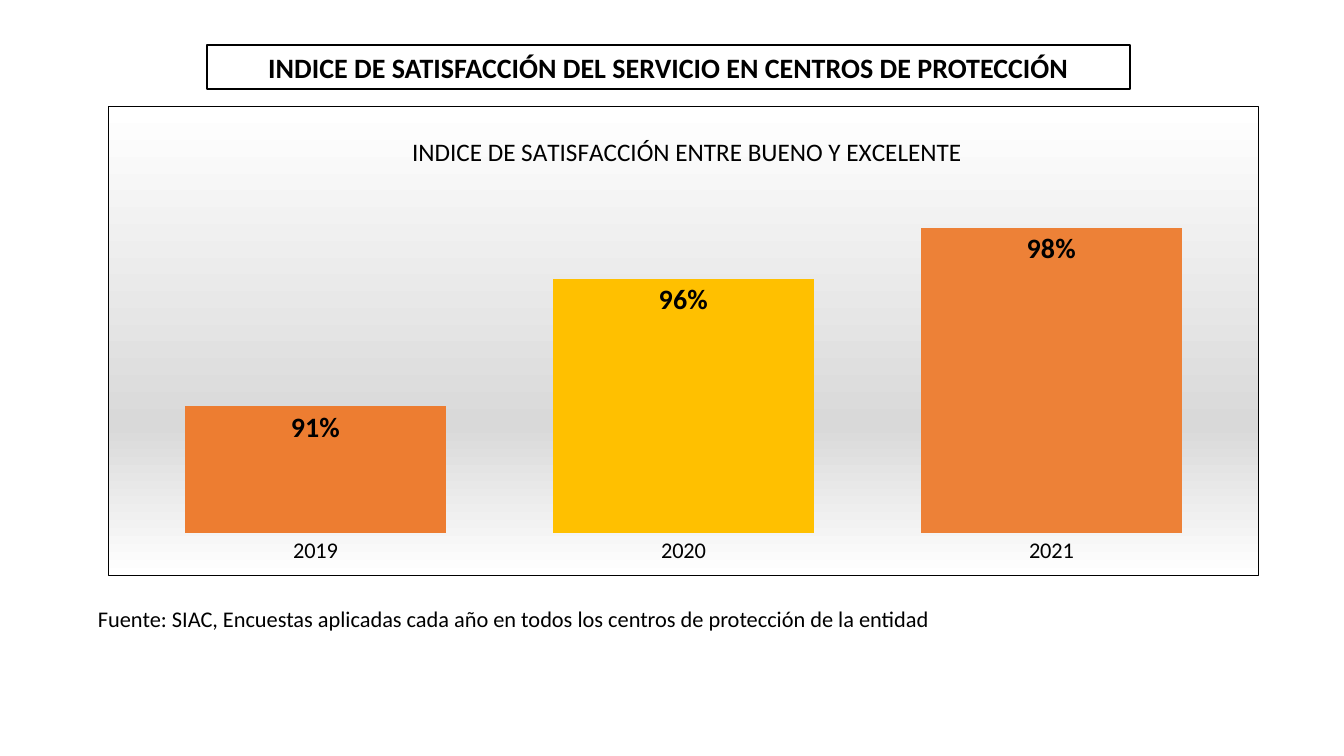
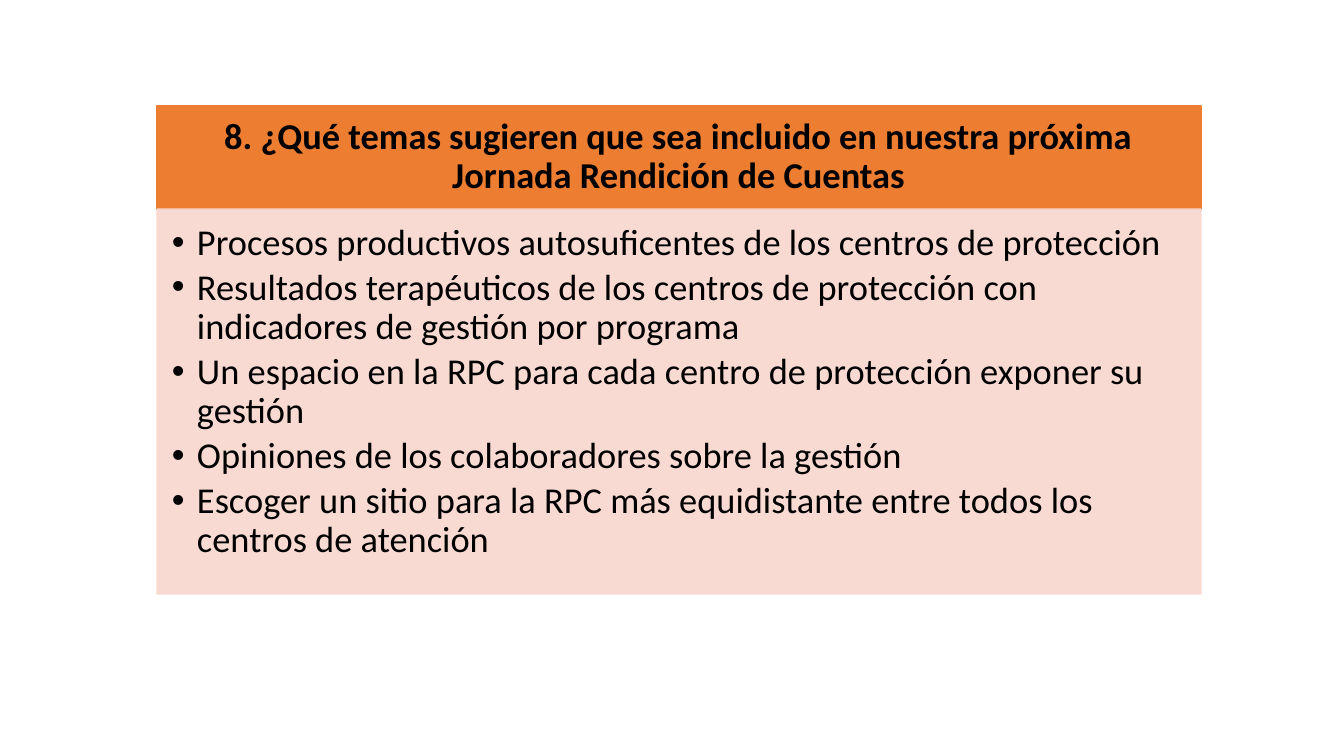
import pptx
import pptx.chart.data
import pptx.dml.color
import pptx.enum.chart
import pptx.enum.shapes
import pptx.enum.text
import pptx.oxml
import pptx.oxml.ns
import pptx.util

SCALE = 914400 / 100.8  # EMU in one px
FONT = "Calibri"
HUES = {
    "ink": "000000",
    "paper": "FFFFFF",
    "grey": "D9D9D9",
    "orange": "ED7D31",
    "gold": "FFC000",
    "amber": "ED8137",
    "pink": "F8D7CE",
}
ALIGN = pptx.enum.text.PP_ALIGN
ANCHOR = pptx.enum.text.MSO_ANCHOR
qn = pptx.oxml.ns.qn


def px(size):
    return pptx.util.Emu(round(size * SCALE))


def hue(name):
    return pptx.dml.color.RGBColor.from_string(HUES[name])


def xml(text, *names):
    """Build an element; the root takes its namespaces at the mark @."""
    return pptx.oxml.parse_xml(text.replace("@", pptx.oxml.ns.nsdecls(*names), 1))


class Deck:
    def __init__(self):
        self.file = pptx.Presentation()
        self.file.slide_width, self.file.slide_height = px(1344), px(756)
        self.slide = None

    def page(self):
        self.slide = self.file.slides.add_slide(self.file.slide_layouts[5])

    # Shared styles
    def style(self, font, size, bold=False):
        font.name, font.size, font.bold = FONT, pptx.util.Pt(size), bold
        font.color.rgb = hue("ink")

    def paint(self, shape, fill, line):
        shape.fill.solid()
        shape.fill.fore_color.rgb = hue(fill)
        shape.line.color.rgb = hue(line)
        shape.line.width = pptx.util.Pt(1)

    def frame(self, shape, pads, anchor):
        frame = shape.text_frame
        frame.word_wrap = True
        frame.auto_size = pptx.enum.text.MSO_AUTO_SIZE.NONE
        frame.vertical_anchor = anchor
        (frame.margin_left, frame.margin_top,
         frame.margin_right, frame.margin_bottom) = map(px, pads)
        return frame

    def say(self, para, text, size, align, bold=False, lead=1.0):
        para.alignment, para.line_spacing = align, lead
        run = para.add_run()
        run.text = text
        self.style(run.font, size, bold)

    # Elements
    def title(self, text, box, size, fill, line, pads, lead=1.0):
        shape = self.slide.shapes.title
        shape.left, shape.top, shape.width, shape.height = map(px, box)
        self.paint(shape, fill, line)
        frame = self.frame(shape, pads, ANCHOR.MIDDLE)
        self.say(frame.paragraphs[0], text, size, ALIGN.CENTER, True, lead)

    def note(self, text, box):
        shape = self.slide.shapes.add_textbox(*map(px, box))
        frame = self.frame(shape, (10, 5, 10, 5), ANCHOR.TOP)
        self.say(frame.paragraphs[0], text, 16, ALIGN.JUSTIFY)

    def bullets(self, items, box, fill, pads):
        shape = self.slide.shapes.add_shape(
            pptx.enum.shapes.MSO_SHAPE.RECTANGLE, *map(px, box))
        shape.shadow.inherit = False
        self.paint(shape, fill, fill)
        for tone in shape.element.spPr.iter(qn("a:srgbClr")):
            tone.append(xml('<a:alpha @ val="90000"/>', "a"))
        frame = self.frame(shape, pads, ANCHOR.TOP)
        for i, item in enumerate(items):
            para = frame.add_paragraph() if i else frame.paragraphs[0]
            props = para._p.get_or_add_pPr()
            props.set("marL", str(px(25)))
            props.set("indent", str(-px(25)))
            props.append(xml('<a:buFont @ typeface="Arial"/>', "a"))
            props.append(xml('<a:buChar @ char="•"/>', "a"))
            para.space_after = pptx.util.Pt(4)
            self.say(para, item, 26, ALIGN.LEFT, lead=0.9)

    def chart(self, head, data, box):
        """Draw a column chart from rows of (category, value, colour)."""
        kinds = pptx.enum.chart
        cats, vals, tones = zip(*data)
        source = pptx.chart.data.CategoryChartData(number_format="0%")
        source.categories = cats
        source.add_series("Series 1", vals)
        chart = self.slide.shapes.add_chart(
            kinds.XL_CHART_TYPE.COLUMN_CLUSTERED, *map(px, box), source).chart
        self.style(chart.font, 10)
        chart.has_legend = False

        # Heading of the chart
        chart.has_title = True
        para = chart.chart_title.text_frame.paragraphs[0]
        run = para.add_run()
        run.text = head
        self.style(run.font, 18)
        self.place(chart.chart_title.element, {"x": 0.26, "y": 0.05})

        # Axes
        axis = chart.category_axis
        axis.major_tick_mark = kinds.XL_TICK_MARK.NONE
        axis.format.line.fill.background()
        self.style(axis.tick_labels.font, 16)
        scale = chart.value_axis
        scale.minimum_scale, scale.maximum_scale = 0.86, 1.0
        scale.has_major_gridlines = False
        scale.visible = False

        # Columns and their labels
        plot = chart.plots[0]
        plot.gap_width, plot.vary_by_categories = 41, False
        for i, tone in enumerate(tones):
            fill = plot.series[0].points[i].format.fill
            fill.solid()
            fill.fore_color.rgb = hue(tone)
        plot.has_data_labels = True
        labels = plot.data_labels
        labels.show_value = True
        labels.number_format, labels.number_format_is_linked = "0%", False
        labels.position = kinds.XL_LABEL_POSITION.INSIDE_END
        self.style(labels.font, 20, True)

        # Plot place, backdrop and border
        root = chart.element.find(qn("c:chart"))
        self.place(root.find(qn("c:plotArea")),
                   {"x": 0.02, "y": 0.15, "w": 0.96, "h": 0.76})
        stops = "".join(
            f'<a:gs pos="{at * 1000}"><a:srgbClr val="{HUES[tone]}"/></a:gs>'
            for at, tone in ((0, "paper"), (68, "grey"), (100, "paper")))
        root.addnext(xml(
            f'<c:spPr @><a:gradFill><a:gsLst>{stops}</a:gsLst>'
            '<a:lin ang="5400000" scaled="0"/></a:gradFill>'
            f'<a:ln w="9525"><a:solidFill><a:srgbClr val="{HUES["ink"]}"/>'
            '</a:solidFill></a:ln></c:spPr>', "c", "a"))

    def place(self, part, spots):
        """Give a chart part a fixed place, as shares of the chart."""
        old = part.find(qn("c:layout"))
        if old is not None:
            part.remove(old)
        inner = '<c:layoutTarget val="inner"/>' if "w" in spots else ""
        modes = "".join(f'<c:{k}Mode val="edge"/>' for k in "xy")
        sizes = "".join(f'<c:{k} val="{v}"/>' for k, v in spots.items())
        new = xml(f"<c:layout @><c:manualLayout>{inner}{modes}{sizes}"
                  "</c:manualLayout></c:layout>", "c")
        text = part.find(qn("c:tx"))
        if text is not None:
            text.addnext(new)
        else:
            part.insert(0, new)


def main():
    deck = Deck()

    # Satisfaction index
    deck.page()
    deck.title("INDICE DE SATISFACCIÓN DEL SERVICIO EN CENTROS DE PROTECCIÓN",
               (207, 45, 923, 44), 20, "paper", "ink", (10, 5, 10, 5))
    deck.note("Fuente: SIAC, Encuestas aplicadas cada año en todos los centros "
              "de protección de la entidad", (88, 600, 1068, 37))
    deck.chart("INDICE DE SATISFACCIÓN ENTRE BUENO Y EXCELENTE",
               (("2019", 0.91, "orange"),
                ("2020", 0.96, "gold"),
                ("2021", 0.98, "amber")), (108, 106, 1151, 470))

    # Suggested topics
    deck.page()
    deck.title("8. ¿Qué temas sugieren que sea incluido en nuestra próxima "
               "Jornada Rendición de Cuentas", (157, 106, 1044, 103),
               26, "orange", "orange", (20, 12, 20, 12), 0.9)
    deck.bullets((
        "Procesos productivos autosuficentes de los centros de protección",
        "Resultados terapéuticos de los centros de protección con "
        "indicadores de gestión por programa",
        "Un espacio en la RPC para cada centro de protección exponer su gestión",
        "Opiniones de los colaboradores sobre la gestión",
        "Escoger un sitio para la RPC más equidistante entre todos los "
        "centros de atención",
    ), (157, 209, 1044, 385), "pink", (15, 15, 20, 23))

    deck.file.save("out.pptx")


if __name__ == "__main__":
    main()
